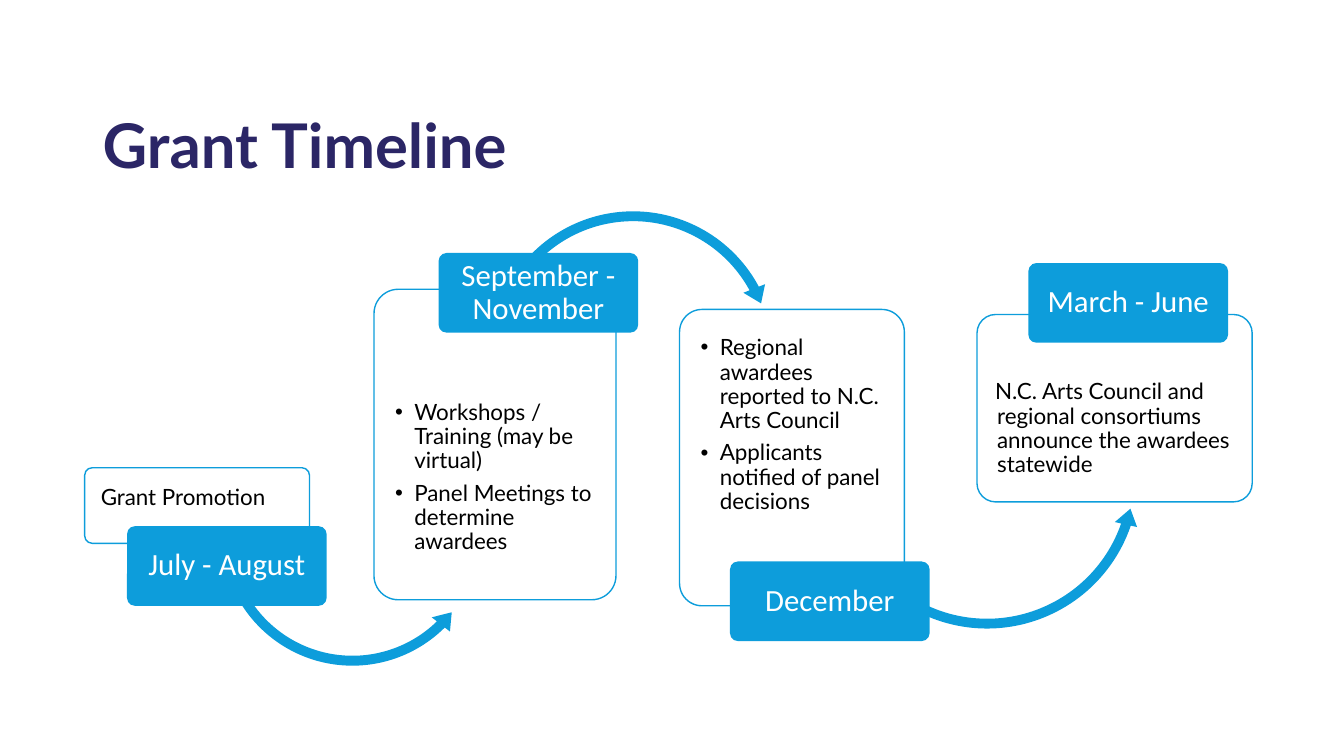
import pptx
import pptx.util
import pptx.dml.color
import pptx.enum.shapes
import pptx.enum.text
import pptx.oxml
import pptx.oxml.ns

Inches, Pt = pptx.util.Inches, pptx.util.Pt
Kind = pptx.enum.shapes.MSO_SHAPE
Align = pptx.enum.text.PP_ALIGN
Anchor = pptx.enum.text.MSO_ANCHOR

BLUE, NAVY, WHITE, BLACK = "0D9DDB", "2B2666", "FFFFFF", "000000"
LABEL = (1.98, 0.79)
LEFT, RIGHT = Kind.LEFT_CIRCULAR_ARROW, Kind.CIRCULAR_ARROW

STEPS = [
    dict(label="July - August", spot=(1.26, 5.22), card=(0.84, 4.64, 2.23, 0.75),
         area=(0.86, 4.66, 2.2, 0.56), lines=["Grant Promotion"], hang=0.19, dots=False,
         arrow=(LEFT, 2.13, 3.94, 2.73, 15.7, (0.036, 4.456, 17.825, 85.859, 0.042))),
    dict(label="September - November", spot=(4.35, 2.51), card=(3.71, 2.87, 2.4, 3.08),
         area=(3.78, 3.6, 2.26, 2.28), hang=0.19, dots=True,
         lines=["Workshops / Training (may be virtual)",
                "Panel Meetings to determine awardees"],
         arrow=(RIGHT, 4.8, 2.03, 2.96, 350.8, (0.033, 4.096, 204.508, 136.114, 0.039))),
    dict(label="December", spot=(7.24, 5.57), card=(6.74, 3.07, 2.23, 2.94),
         area=(6.81, 3.13, 2.1, 2.18), hang=0.19, dots=True,
         lines=["Regional awardees reported to N.C. Arts Council",
                "Applicants notified of panel decisions"],
         arrow=(LEFT, 8.22, 3.16, 3.14, 5.9, (0.031, 3.843, 7.854, 76.5, 0.036))),
    dict(label="March - June", spot=(10.2, 2.61), card=(9.69, 3.12, 2.73, 1.86),
         area=(9.73, 3.57, 2.64, 1.37), hang=0.02, dots=False, arrow=None,
         lines=["N.C. Arts Council and regional consortiums announce the awardees statewide"]),
]


def color(code):
    return pptx.dml.color.RGBColor.from_string(code)


def node(parent, tag, **attrs):
    item = pptx.oxml.parse_xml(f"<a:{tag} {pptx.oxml.ns.nsdecls('a')}/>")
    for key, value in attrs.items():
        item.set(key, str(value))
    parent.append(item)


def write(lines, shape, size=16, font="Lato", ink=BLACK, bold=False, align=Align.LEFT,
          anchor=Anchor.MIDDLE, inset=(0.14, 0.14), hang=0, dots=False, after=0):
    frame = shape.text_frame
    frame.word_wrap = True
    frame.vertical_anchor = anchor
    frame.margin_left = frame.margin_right = Inches(inset[0])
    frame.margin_top = frame.margin_bottom = Inches(inset[1])
    for i, line in enumerate(lines):
        para = frame.add_paragraph() if i else frame.paragraphs[0]
        para.alignment = align
        para.line_spacing = 0.9
        para.space_after = Pt(after)
        props = para._p.get_or_add_pPr()
        if hang:
            props.set("marL", str(Inches(hang)))
            props.set("indent", str(-Inches(hang)))
        if dots:
            node(props, "buFont", typeface="Arial")
            node(props, "buChar", char="•")
        run = para.add_run()
        run.text = line
        run.font.size = Pt(size)
        run.font.name = font
        run.font.bold = bold
        run.font.color.rgb = color(ink)


def draw(kind, box, fill, line=None):
    shape = slide.shapes.add_shape(kind, *map(Inches, box))
    shape.shadow.inherit = False
    shape.fill.solid()
    shape.fill.fore_color.rgb = color(fill)
    if line:
        shape.line.color.rgb = color(line)
        shape.line.width = Pt(1)
    else:
        shape.line.fill.background()
    return shape


def panel(box, fill, line=None):
    shape = draw(Kind.ROUNDED_RECTANGLE, box, fill, line)
    shape.adjustments[0] = 0.1
    return shape


def area(box):
    return slide.shapes.add_textbox(*map(Inches, box))


deck = pptx.Presentation()
deck.slide_width, deck.slide_height = Inches(13.33), Inches(7.5)
slide = deck.slides.add_slide(deck.slide_layouts[6])

write(["Grant Timeline"], area((0.92, 0.4, 11.5, 1.45)), size=44, ink=NAVY, bold=True,
      anchor=Anchor.BOTTOM, inset=(0.1, 0.05))

for step in STEPS:
    card = panel(step["card"], WHITE, BLUE)
    node(card.fill._xPr.solidFill[0], "alpha", val=90000)
    write(step["lines"], area(step["area"]), hang=step["hang"], dots=step["dots"],
          after=6 if step["dots"] else 2.4)
    if step["arrow"]:
        kind, left, top, side, turn, bends = step["arrow"]
        arrow = draw(kind, (left, top, side, side), BLUE)
        arrow.rotation = turn
        for i, bend in enumerate(bends):
            arrow.adjustments[i] = bend
    label = panel(step["spot"] + LABEL, BLUE)
    write([step["label"]], label, size=22, font="Calibri", ink=WHITE,
          align=Align.CENTER, inset=(0.05, 0.03))

deck.save("out.pptx")
